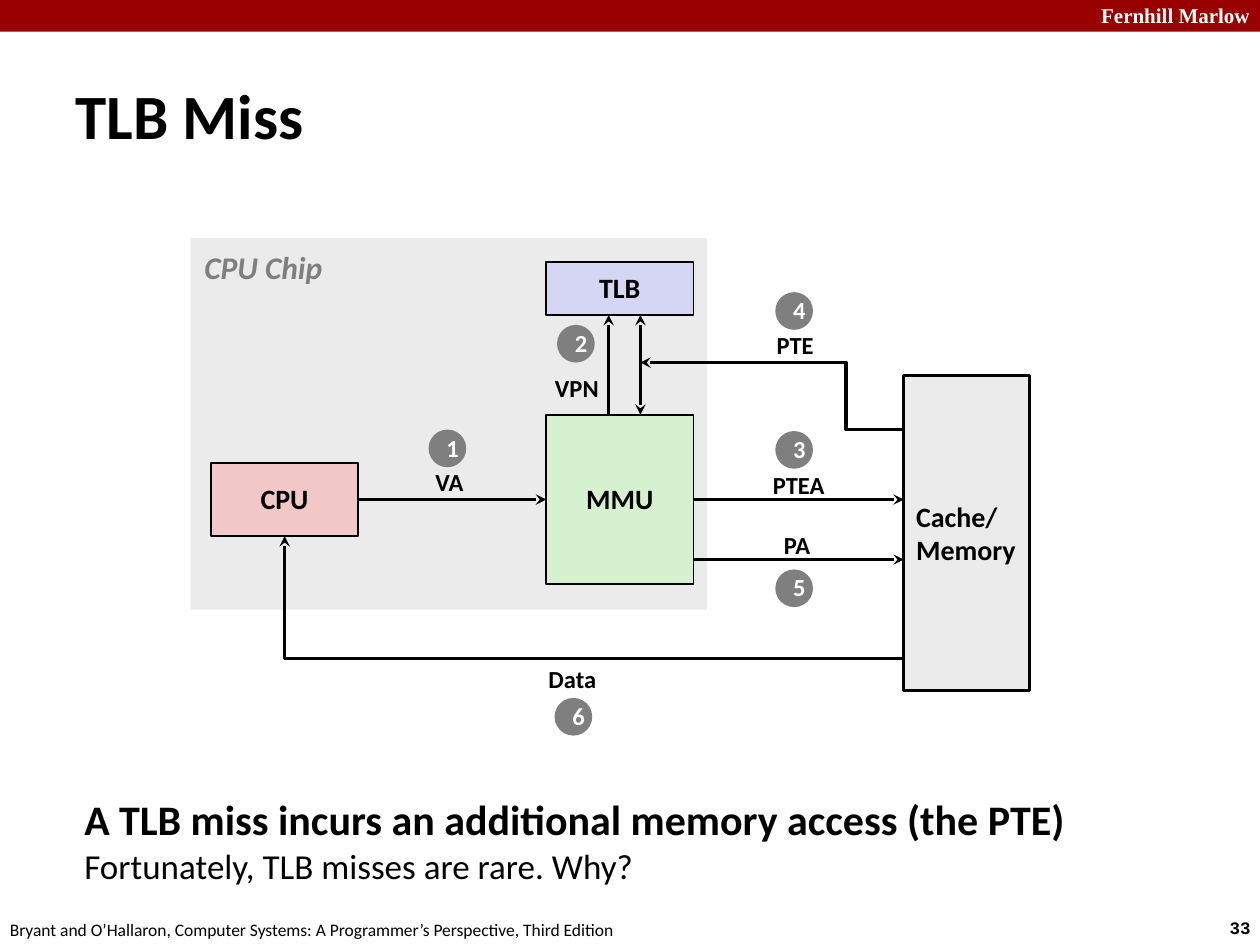
from dataclasses import dataclass
from lxml.etree import SubElement as Sub
from pptx import Presentation
from pptx.dml.color import RGBColor as Rgb
from pptx.enum.shapes import MSO_CONNECTOR as Link, MSO_SHAPE as Form
from pptx.enum.text import MSO_ANCHOR as Anchor, PP_ALIGN as Align
from pptx.oxml.ns import qn
from pptx.util import Cm, Pt


@dataclass(frozen=True)
class Theme:
    """Colours, fonts and type sizes of the slide."""
    font: str = "Calibri"
    serif: str = "Times New Roman"
    mono: str = "Courier New"
    black: str = "000000"
    white: str = "FFFFFF"
    red: str = "990000"
    pale: str = "EBEBEB"
    grey: str = "7F7F7F"
    green: str = "D5F1CF"
    pink: str = "F1C7C7"
    blue: str = "D5D5F4"
    title: int = 36
    lead: int = 24
    body: int = 20
    chip: int = 18
    block: int = 16
    label: int = 14
    brand: int = 12
    foot: int = 10


T = Theme()


def style(para, size, color=T.black, font=T.font, bold=True, italic=False):
    """Format every run of a paragraph."""
    for run in para.runs:
        face = run.font
        face.name, face.size = font, Pt(size)
        face.bold, face.italic = bold, italic
        face.color.rgb = Rgb.from_string(color)


def write(slide, box, text, size, wrap=False, **look):
    """Add a left-aligned text box and return its frame."""
    frame = slide.shapes.add_textbox(*map(Cm, box)).text_frame
    frame.word_wrap = wrap
    frame.text = text
    for para in frame.paragraphs:
        style(para, size, **look)
    return frame


def center(frame):
    """Centre text both ways with slightly tight lines."""
    frame.vertical_anchor = Anchor.MIDDLE
    for para in frame.paragraphs:
        para.alignment = Align.CENTER
        para.line_spacing = 0.98


def block(slide, box, fill, text="", size=T.block, color=T.black,
          form=Form.RECTANGLE, edge=0):
    """Add a filled shape with centred text."""
    shape = slide.shapes.add_shape(form, *map(Cm, box))
    shape.shadow.inherit = False
    shape.fill.solid()
    shape.fill.fore_color.rgb = Rgb.from_string(fill)
    if edge:
        shape.line.color.rgb = Rgb.from_string(T.black)
        shape.line.width = Pt(edge)
    else:
        shape.line.fill.background()
    if text:
        shape.text_frame.text = text
        for para in shape.text_frame.paragraphs:
            style(para, size, color)
        center(shape.text_frame)
    return shape


def arrow(slide, start, end, kind=Link.STRAIGHT, both=False):
    """Add a black connector with stealth arrowheads."""
    link = slide.shapes.add_connector(kind, *map(Cm, start + end))
    link.line.color.rgb = Rgb.from_string(T.black)
    link.line.width = Pt(2)
    line = link.line._get_or_add_ln()
    for tag in ("a:headEnd", "a:tailEnd") if both else ("a:tailEnd",):
        Sub(line, qn(tag), type="stealth")
    Sub(link._element.spPr, qn("a:effectLst"))
    return link


def bend(link, form, ratio=None):
    """Set the elbow form of a connector and where it turns."""
    geom = link._element.spPr.find(qn("a:prstGeom"))
    geom.set("prst", form)
    if ratio is not None:
        guides = geom.find(qn("a:avLst"))
        Sub(guides, qn("a:gd"), name="adj1", fmla=f"val {round(ratio * 100000)}")


def frame(slide, wide, high):
    """Place the top bar, the footer and the page number."""
    block(slide, (0, 0, wide, 0.64), T.red)
    write(slide, (wide - 3.45, -0.08, 3.63, 0.76), "Fernhill Marlow",
          T.brand, color=T.white, font=T.serif)
    write(slide, (wide - 0.86, high - 0.69, 1.14, 0.69), "33", T.foot, font=T.mono)
    write(slide, (-0.05, high - 0.64, 12.9, 0.69),
          "Bryant and O’Hallaron, Computer Systems: "
          "A Programmer’s Perspective, Third Edition", T.foot, bold=False)


def head(slide, box, text):
    """Move and format the title placeholder."""
    title = slide.shapes.title
    title.left, title.top, title.width, title.height = map(Cm, box)
    title.text_frame.text = text
    title.text_frame.vertical_anchor = Anchor.MIDDLE
    para = title.text_frame.paragraphs[0]
    para.alignment = Align.LEFT
    style(para, T.title)


def diagram(slide, box):
    """Draw the path of a TLB miss from the chip to memory."""
    left, top, wide, high = box

    def at(x, y):
        return left + x, top + y

    block(slide, box, T.pale)
    write(slide, (*at(0.03, 0.08), 2.95, 1.02), "CPU Chip", T.chip,
          color=T.grey, italic=True)
    unit = 2.97
    mmu = block(slide, (*at(7.17, 3.56), unit, 3.42), T.green, "MMU", edge=1)
    cpu = block(slide, (*at(0.41, 4.53), unit, 1.48), T.pink, "CPU", edge=1)
    block(slide, (*at(7.17, 0.48), unit, 1.07), T.blue, "TLB", edge=1)
    cache = block(slide, (*at(14.38, 2.77), 2.54, 6.35), T.pale,
                  "Cache/\nMemory", edge=1.5)
    for para in cache.text_frame.paragraphs:
        para.alignment = Align.LEFT
        para.line_spacing = 1.0

    mid, edge = 5.27, 14.38
    va = arrow(slide, at(3.38, mid), at(7.17, mid))
    va.begin_connect(cpu, 3)
    va.end_connect(mmu, 1)
    ptea = arrow(slide, at(10.14, mid), at(edge, mid))
    ptea.begin_connect(mmu, 3)
    arrow(slide, at(10.14, 6.48), at(edge, 6.48))
    arrow(slide, at(8.43, 3.56), at(8.43, 1.55))
    arrow(slide, at(9.07, 1.55), at(9.07, 3.56), both=True)
    data = arrow(slide, at(edge, 8.48), at(1.9, 6.01), Link.ELBOW)
    bend(data, "bentConnector2")
    pte = arrow(slide, at(edge, 3.86), at(9.07, 2.51), Link.ELBOW)
    bend(pte, "bentConnector3", 0.22)

    tall, dot = 0.84, 0.76
    labels = (("VA", 5.22, 4.94, 1.14), ("VPN", 7.79, 3.04, 1.4),
              ("PTEA", 12.26, 4.99, 1.55), ("PTE", 12.19, 2.17, 1.27),
              ("PA", 12.23, 6.21, 1.14), ("Data", 7.7, 8.9, 1.47))
    for text, x, y, span in labels:
        center(write(slide, (*at(x - span / 2, y - tall / 2), span, tall),
                     text, T.label))
    steps = ((5.18, 4.24), (7.77, 2.13), (12.17, 4.27),
             (12.17, 1.47), (12.17, 7.06), (7.72, 9.65))
    for step, (x, y) in enumerate(steps, 1):
        block(slide, (*at(x - dot / 2, y - dot / 2), dot, dot), T.grey,
              str(step), T.label, T.white, Form.OVAL)


def close(slide, box, lead, body):
    """Write the closing statement and its question."""
    text = write(slide, box, f"{lead}\n{body}", T.lead, wrap=True)
    style(text.paragraphs[1], T.body, bold=False)


def main():
    """Build and save the slide."""
    deck = Presentation()
    wide, high = 25.4, 19.05
    deck.slide_width, deck.slide_height = Cm(wide), Cm(high)
    slide = deck.slides.add_slide(deck.slide_layouts[5])
    frame(slide, wide, high)
    head(slide, (1.27, 1.22, 24.2, 2.18), "TLB Miss")
    diagram(slide, (3.84, 4.8, 10.41, 7.49))
    close(slide, (1.45, 15.88, 21.41, 2.54),
          "A TLB miss incurs an additional memory access (the PTE)",
          "Fortunately, TLB misses are rare. Why?")
    deck.save("out.pptx")


if __name__ == "__main__":
    main()
